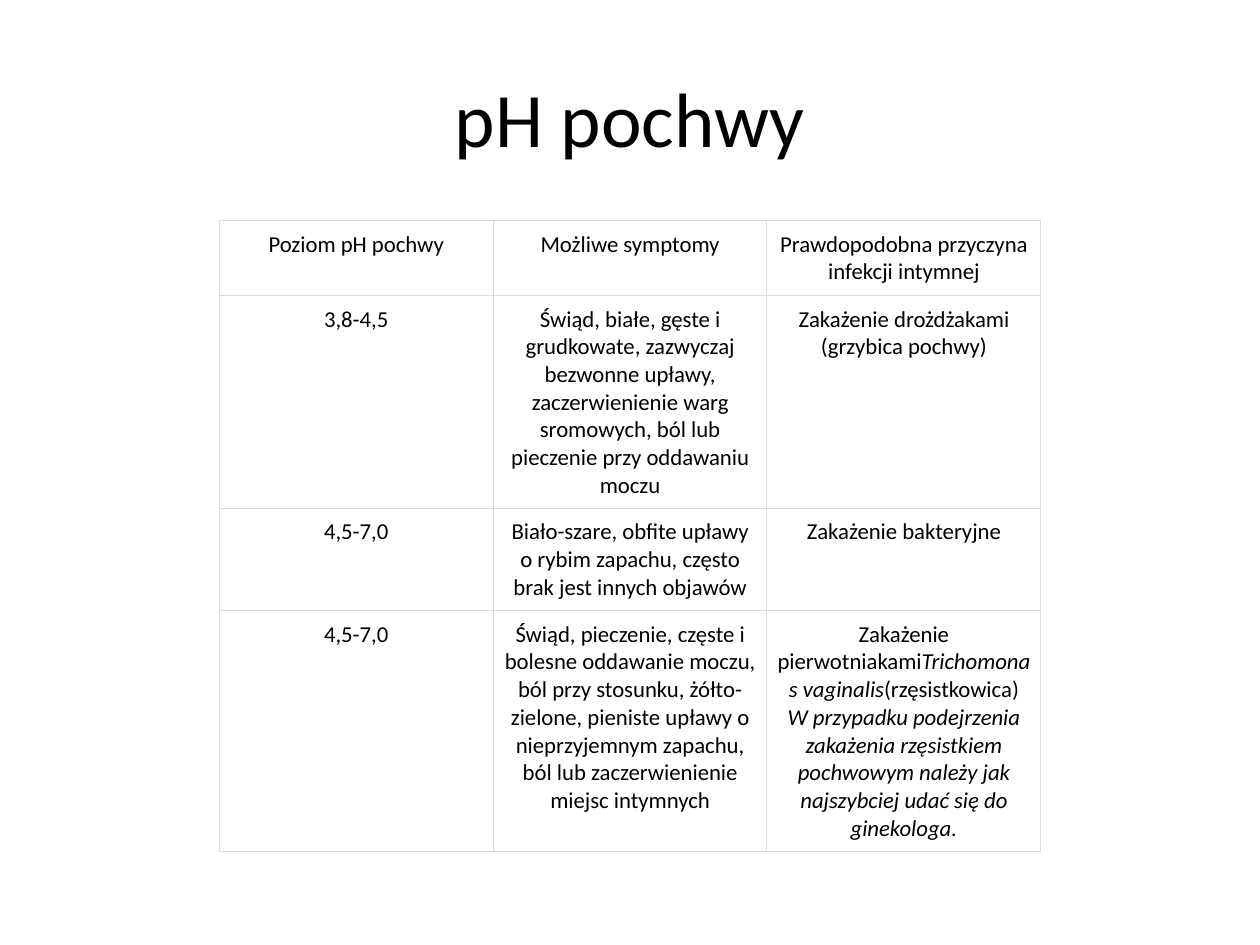
"""Build a slide with a table of vaginal pH levels, symptoms and likely causes."""

from dataclasses import dataclass

from lxml.etree import SubElement
from pptx import Presentation
from pptx.dml.color import RGBColor
from pptx.enum.text import MSO_ANCHOR, PP_ALIGN
from pptx.oxml.ns import qn
from pptx.slide import Slide
from pptx.table import _Cell
from pptx.text.text import TextFrame
from pptx.util import Inches, Pt


@dataclass(frozen=True)
class Theme:
    font: str = "Calibri"
    title_size: float = 44
    cell_size: float = 13
    text: str = "000000"
    fill: str = "FFFFFF"
    border: str = "D3DDE3"
    border_width: float = 0.75
    cell_margin: float = 0.08


@dataclass(frozen=True)
class Segment:
    text: str
    italic: bool = False
    break_after: bool = False


@dataclass(frozen=True)
class Row:
    height: float
    level: str
    symptoms: str
    cause: tuple[Segment, ...]


THEME = Theme()
TABLE_LEFT, TABLE_TOP, TABLE_WIDTH = 1.74, 1.75, 6.52
ROWS = (
    Row(0.59, "Poziom pH pochwy", "Możliwe symptomy",
        (Segment("Prawdopodobna przyczyna infekcji intymnej"),)),
    Row(1.69, "3,8-4,5",
        "Świąd, białe, gęste i grudkowate, zazwyczaj bezwonne upławy, "
        "zaczerwienienie warg sromowych, ból lub pieczenie przy oddawaniu moczu",
        (Segment("Zakażenie drożdżakami (grzybica pochwy)"),)),
    Row(0.81, "4,5-7,0",
        "Biało-szare, obfite upławy o rybim zapachu, często brak jest innych objawów",
        (Segment("Zakażenie bakteryjne"),)),
    Row(1.91, "4,5-7,0",
        "Świąd, pieczenie, częste i bolesne oddawanie moczu, ból przy stosunku, "
        "żółto-zielone, pieniste upławy o nieprzyjemnym zapachu, "
        "ból lub zaczerwienienie miejsc intymnych",
        (Segment("Zakażenie pierwotniakami"),
         Segment("Trichomonas vaginalis", italic=True),
         Segment("(rzęsistkowica)", break_after=True),
         Segment("W przypadku podejrzenia zakażenia rzęsistkiem pochwowym "
                 "należy jak najszybciej udać się do ginekologa.", italic=True))),
)


def write_text(frame: TextFrame, segments: tuple[Segment, ...], *, size: float,
               color: str = THEME.text, align: PP_ALIGN = PP_ALIGN.CENTER) -> None:
    frame.word_wrap = True
    paragraph = frame.paragraphs[0]
    paragraph.alignment = align
    paragraph.font.size = Pt(size)
    for segment in segments:
        run = paragraph.add_run()
        run.text = segment.text
        run.font.name = THEME.font
        run.font.size = Pt(size)
        run.font.italic = segment.italic
        run.font.color.rgb = RGBColor.from_string(color)
        if segment.break_after:
            paragraph.add_line_break()


def style_cell(cell: _Cell) -> None:
    margin = Inches(THEME.cell_margin)
    cell.margin_left = cell.margin_right = margin
    cell.margin_top = cell.margin_bottom = margin
    properties = cell._tc.get_or_add_tcPr()
    for side in ("a:lnL", "a:lnR", "a:lnT", "a:lnB"):
        line = SubElement(properties, qn(side), w=str(Pt(THEME.border_width)))
        fill = SubElement(line, qn("a:solidFill"))
        SubElement(fill, qn("a:srgbClr"), val=THEME.border)
    cell.fill.solid()
    cell.fill.fore_color.rgb = RGBColor.from_string(THEME.fill)


def add_title(slide: Slide, text: str) -> None:
    box = slide.shapes.add_textbox(Inches(0.5), Inches(0.3), Inches(9), Inches(1.25))
    box.text_frame.vertical_anchor = MSO_ANCHOR.MIDDLE
    write_text(box.text_frame, (Segment(text),), size=THEME.title_size)


def add_ph_table(slide: Slide, rows: tuple[Row, ...]) -> None:
    height = sum(row.height for row in rows)
    table = slide.shapes.add_table(
        len(rows), 3, Inches(TABLE_LEFT), Inches(TABLE_TOP),
        Inches(TABLE_WIDTH), Inches(height)).table
    table.first_row = table.horz_banding = False
    for table_row, row in zip(table.rows, rows):
        table_row.height = Inches(row.height)
        contents = ((Segment(row.level),), (Segment(row.symptoms),), row.cause)
        for cell, segments in zip(table_row.cells, contents):
            style_cell(cell)
            write_text(cell.text_frame, segments, size=THEME.cell_size)


def main() -> None:
    presentation = Presentation()
    presentation.slide_width = Inches(10)
    presentation.slide_height = Inches(7.5)
    slide = presentation.slides.add_slide(presentation.slide_layouts[6])
    add_title(slide, "pH pochwy")
    add_ph_table(slide, ROWS)
    presentation.save("out.pptx")


if __name__ == "__main__":
    main()
